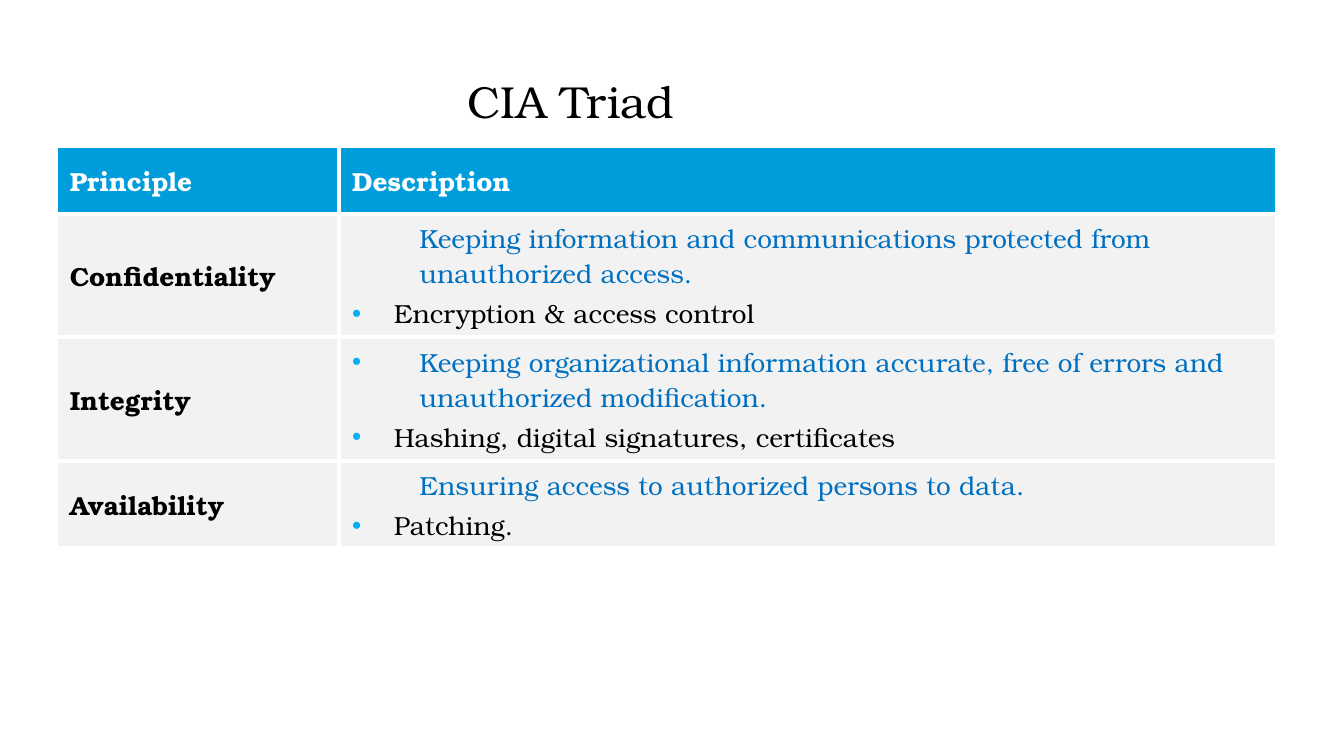
import pptx
import pptx.util
import pptx.dml.color
import pptx.enum.text
import pptx.oxml.ns
from lxml import etree

Inches = pptx.util.Inches
Pt = pptx.util.Pt
ANCHOR = pptx.enum.text.MSO_ANCHOR
FONT = "TeX Gyre Bonum"
COLORS = {
    "black": "000000",
    "white": "FFFFFF",
    "header": "009DDC",
    "body": "F2F2F2",
    "definition": "0070C0",
    "bullet": "00B0F0",
}
PRINCIPLES = [
    ("Confidentiality", 0.92, False,
     "\tKeeping information and communications protected from unauthorized access.",
     "Encryption & access control"),
    ("Integrity", 0.92, True,
     "Keeping organizational information accurate, free of errors and unauthorized modification.",
     "Hashing, digital signatures, certificates"),
    ("Availability", 0.65, False,
     "\tEnsuring access to authorized persons to data.",
     "Patching."),
]


def add_xml(parent, tag, **attributes):
    return etree.SubElement(parent, pptx.oxml.ns.qn(tag), attributes)


class SlideBuilder:
    def __init__(self, page):
        self.page = page

    def style(self, para, size, color, bold=False):
        for span in para.runs:
            span.font.name = FONT
            span.font.size = Pt(size)
            span.font.bold = bold
            span.font.color.rgb = pptx.dml.color.RGBColor.from_string(COLORS[color])

    def title(self, text, left, top, width, height):
        box = self.page.shapes.add_textbox(
            Inches(left), Inches(top), Inches(width), Inches(height))
        frame = box.text_frame
        frame.word_wrap = True
        frame.margin_top = frame.margin_bottom = 0
        frame.text = text
        para = frame.paragraphs[0]
        para.alignment = pptx.enum.text.PP_ALIGN.CENTER
        self.style(para, 24, "black")

    def table(self, left, top, widths, heights):
        frame = self.page.shapes.add_table(
            len(heights), len(widths), Inches(left), Inches(top),
            Inches(sum(widths)), Inches(sum(heights)))
        for column, width in zip(frame.table.columns, widths):
            column.width = Inches(width)
        for row, height in zip(frame.table.rows, heights):
            row.height = Inches(height)
        return frame.table

    def cell(self, cell, fill, lines):
        cell.vertical_anchor = ANCHOR.MIDDLE
        self.borders(cell)
        cell.fill.solid()
        cell.fill.fore_color.rgb = pptx.dml.color.RGBColor.from_string(COLORS[fill])
        cell.text_frame.text = "\n".join(line[0] for line in lines)
        for para, (text, color, bold, indent, bullet) in zip(
                cell.text_frame.paragraphs, lines):
            para.space_before = Pt(2.8)
            self.style(para, 14, color, bold)
            self.indent(para, indent, bullet)

    def borders(self, cell):
        properties = cell._tc.get_or_add_tcPr()
        for side in ("a:lnL", "a:lnR", "a:lnT", "a:lnB"):
            line = add_xml(properties, side, w=str(Pt(2.25)))
            fill = add_xml(line, "a:solidFill")
            add_xml(fill, "a:srgbClr", val=COLORS["white"])

    def indent(self, para, indent, bullet):
        properties = para._p.get_or_add_pPr()
        properties.set("marL", str(Inches(indent)))
        properties.set("indent", str(-Inches(indent)))
        if bullet:
            color = add_xml(properties, "a:buClr")
            add_xml(color, "a:srgbClr", val=COLORS["bullet"])
            add_xml(properties, "a:buFont", typeface="Arial")
            add_xml(properties, "a:buChar", char="•")
        else:
            add_xml(properties, "a:buNone")


def main():
    deck = pptx.Presentation()
    deck.slide_width = Inches(10)
    deck.slide_height = deck.slide_width * 9 // 16
    builder = SlideBuilder(deck.slides.add_slide(deck.slide_layouts[6]))
    builder.title("CIA Triad", 1, 0.55, 6.5, 0.75)

    heights = [0.5] + [principle[1] for principle in PRINCIPLES]
    table = builder.table(0.42, 1.09, [2.1, 6.98], heights)
    for column, heading in enumerate(("Principle", "Description")):
        builder.cell(table.cell(0, column), "header",
                     [(heading, "white", True, 0, False)])
    for row, (name, height, bulleted, definition, measure) in enumerate(PRINCIPLES, 1):
        builder.cell(table.cell(row, 0), "body", [(name, "black", True, 0, False)])
        builder.cell(table.cell(row, 1), "body", [
            (definition, "definition", False, 0.5, bulleted),
            (measure, "black", False, 0.31, True),
        ])
    deck.save("out.pptx")


if __name__ == "__main__":
    main()
